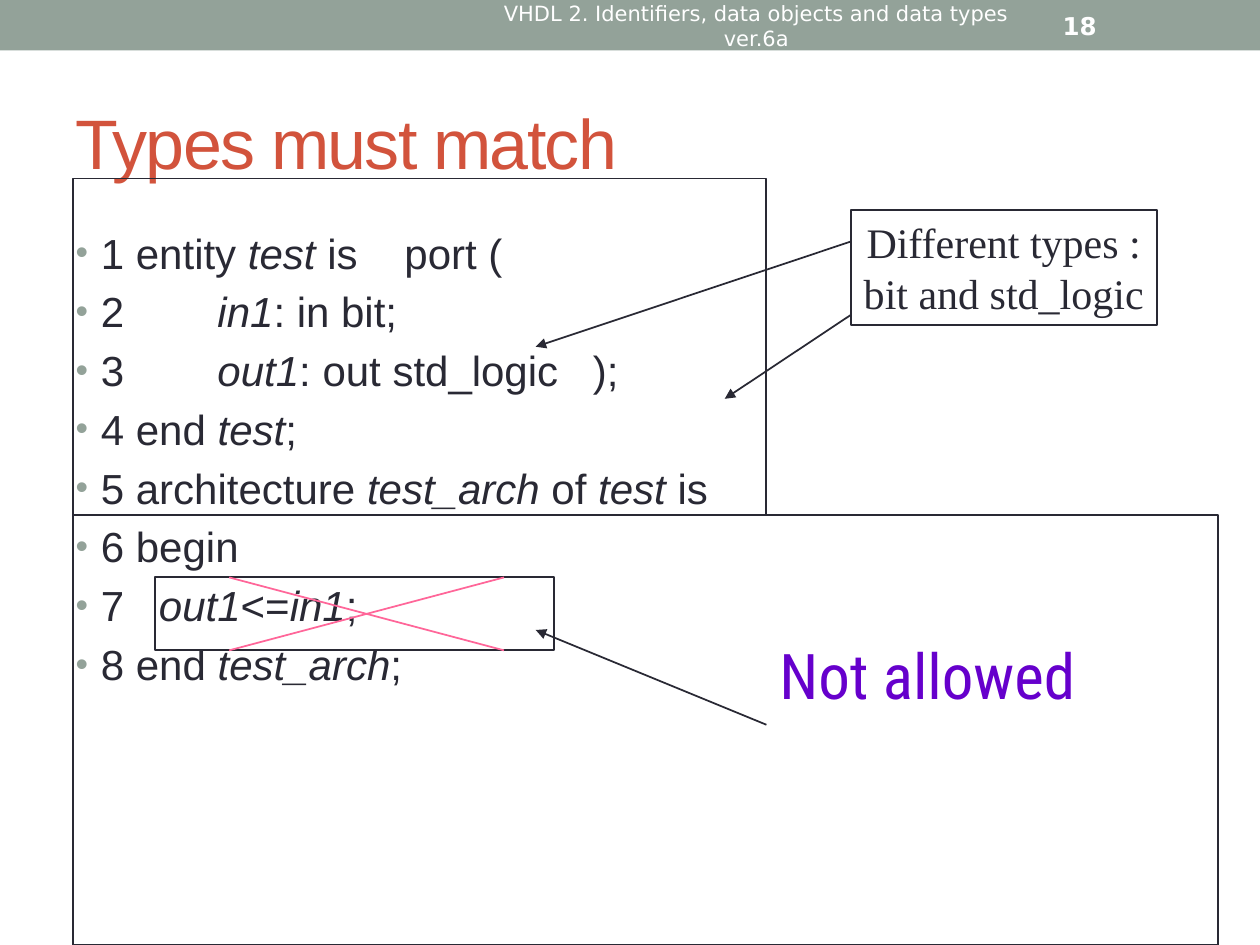
from dataclasses import dataclass

import pptx
import pptx.dml.color
import pptx.enum.shapes
import pptx.enum.text
import pptx.oxml.ns
import pptx.util
from lxml import etree
from pptx.enum.text import MSO_ANCHOR, MSO_AUTO_SIZE, PP_ALIGN
from pptx.util import Cm, Pt


@dataclass(frozen=True)
class Theme:
    ink: str = "292934"
    sage: str = "93A299"
    rust: str = "D2533C"
    white: str = "FFFFFF"
    pink: str = "FF6699"
    violet: str = "6600CC"
    sans: str = "Arial"
    header: str = "DejaVu Sans"
    serif: str = "Times New Roman"
    condensed: str = "Roboto Condensed"
    title_size: int = 40
    warning_size: int = 36
    text_size: int = 24
    number_size: int = 14
    header_size: int = 12
    line_width: int = 1


THEME = Theme()

# Each line of code: its tab stops in cm, then its text with *italic* names.
CODE = [
    ([6.63], "1 entity *test* is\tport ("),
    ([2.86], "2\t*in1*: in bit;"),
    ([2.86, 10.43], "3\t*out1*: out std_logic\t);"),
    ([], "4 end *test*;"),
    ([], "5 architecture *test_arch* of *test* is"),
    ([], "6 begin"),
    ([1.68], "7\t*out1*<=*in1*;"),
    ([], "8 end *test_arch*;"),
]


def rgb(color):
    return pptx.dml.color.RGBColor.from_string(color)


def add_xml(parent, tag, **attributes):
    return etree.SubElement(parent, pptx.oxml.ns.qn(tag), attributes)


def place(shape, left, top, width, height):
    shape.left, shape.top = Cm(left), Cm(top)
    shape.width, shape.height = Cm(width), Cm(height)


def set_font(paragraph, name, size, color, bold=False):
    font = paragraph.font
    font.name, font.size, font.bold = name, Pt(size), bold
    font.color.rgb = rgb(color)


def set_title(slide, wording):
    title = slide.shapes.title
    place(title, 1.27, 1.49, 22.86, 2.74)
    frame = title.text_frame
    frame.text = wording
    frame.auto_size = MSO_AUTO_SIZE.NONE
    frame.vertical_anchor = MSO_ANCHOR.MIDDLE
    paragraph = frame.paragraphs[0]
    paragraph.alignment = PP_ALIGN.LEFT
    set_font(paragraph, THEME.sans, THEME.title_size, THEME.rust)
    paragraph.runs[0]._r.get_or_add_rPr().set("spc", "-100")


def format_bullet(paragraph, tab_stops):
    """Hanging bullet, with tab stops measured in cm from the text edge."""
    properties = paragraph._p.get_or_add_pPr()
    properties.set("marL", str(Cm(0.51)))
    properties.set("indent", str(Cm(-0.51)))
    bullet_color = add_xml(properties, "a:buClr")
    add_xml(bullet_color, "a:srgbClr", val=THEME.sage)
    add_xml(properties, "a:buSzPct", val="85000")
    add_xml(properties, "a:buFont", typeface=THEME.sans)
    add_xml(properties, "a:buChar", char="•")
    if tab_stops:
        tabs = add_xml(properties, "a:tabLst")
        for stop in tab_stops:
            add_xml(tabs, "a:tab", pos=str(Cm(stop)), algn="l")


def set_code(slide, lines):
    body = slide.placeholders[1]
    place(body, 1.27, 4.45, 22.86, 13.54)
    frame = body.text_frame
    frame.auto_size = MSO_AUTO_SIZE.NONE
    for index, (tab_stops, wording) in enumerate(lines):
        paragraph = frame.add_paragraph() if index else frame.paragraphs[0]
        paragraph.space_before = Pt(4.8)
        format_bullet(paragraph, tab_stops)
        set_font(paragraph, THEME.sans, THEME.text_size, THEME.ink)
        for part, segment in enumerate(wording.split("*")):
            if segment:
                run = paragraph.add_run()
                run.text = segment
                if part % 2:
                    run.font.italic = True


def write(shape, lines, name, size, color, align=PP_ALIGN.CENTER,
          anchor=MSO_ANCHOR.MIDDLE, wrap=True, bold=False):
    frame = shape.text_frame
    frame.word_wrap = wrap
    if not wrap:
        frame.margin_left = frame.margin_right = 0
    frame.vertical_anchor = anchor
    frame.text = "\n".join(lines)
    for paragraph in frame.paragraphs:
        paragraph.alignment = align
        set_font(paragraph, name, size, color, bold)


def add_label(slide, box, wording, *style, **options):
    label = slide.shapes.add_textbox(*map(Cm, box))
    write(label, [wording], *style, **options)


def add_box(slide, box, fill=None):
    """Filled without an outline, or outlined without a fill."""
    rectangle = slide.shapes.add_shape(
        pptx.enum.shapes.MSO_SHAPE.RECTANGLE, *map(Cm, box))
    rectangle.shadow.inherit = False
    if fill:
        rectangle.fill.solid()
        rectangle.fill.fore_color.rgb = rgb(fill)
        rectangle.line.fill.background()
    else:
        rectangle.fill.background()
        rectangle.line.color.rgb = rgb(THEME.ink)
        rectangle.line.width = Pt(THEME.line_width)
    return rectangle


def add_line(slide, start, end, color=THEME.ink, arrow=False):
    line = slide.shapes.add_connector(
        pptx.enum.shapes.MSO_CONNECTOR.STRAIGHT, *map(Cm, start + end))
    line.line.color.rgb = rgb(color)
    line.line.width = Pt(THEME.line_width)
    if arrow:
        add_xml(line.line._get_or_add_ln(), "a:tailEnd", type="triangle")
    add_xml(line._element.spPr, "a:effectLst")


def add_header(slide):
    add_box(slide, (0, 0, 25.4, 1.02), THEME.sage)
    add_label(slide, (9.53, 0.07, 11.43, 0.91),
              "VHDL 2. Identifiers, data objects and data types ver.6a",
              THEME.header, THEME.header_size, THEME.white)
    add_label(slide, (21.17, 0.07, 2.96, 0.91), "18", THEME.header,
              THEME.number_size, THEME.white, align=PP_ALIGN.LEFT, bold=True)


def add_type_note(slide):
    note = add_box(slide, (17.15, 4.23, 6.17, 2.32))
    write(note, ["Different types :", "bit and std_logic"],
          THEME.serif, THEME.text_size, THEME.ink, wrap=False)
    add_line(slide, (17.15, 4.87), (10.8, 6.99), arrow=True)
    add_line(slide, (17.15, 6.35), (14.61, 8.04), arrow=True)


def add_forbidden_assignment(slide):
    left, right, top, bottom = 4.62, 10.16, 11.64, 13.11
    add_box(slide, (3.12, top, 8.05, bottom - top))
    add_label(slide, (15.57, 12.7, 6.25, 3.58), "Not allowed",
              THEME.condensed, THEME.warning_size, THEME.violet,
              anchor=MSO_ANCHOR.TOP, wrap=False)
    add_line(slide, (left, bottom), (right, top), THEME.pink)
    add_line(slide, (left, top), (right, bottom), THEME.pink)
    add_line(slide, (15.45, 14.61), (10.8, 12.7), arrow=True)


def main():
    deck = pptx.Presentation()
    deck.slide_width, deck.slide_height = Cm(25.4), Cm(19.05)
    slide = deck.slides.add_slide(deck.slide_layouts[1])
    set_title(slide, "Types must match")
    set_code(slide, CODE)
    add_header(slide)
    add_type_note(slide)
    add_forbidden_assignment(slide)
    add_box(slide, (1.48, 3.6, 13.97, 6.78))
    add_box(slide, (1.48, 10.38, 23.07, 8.67))
    deck.save("out.pptx")


if __name__ == "__main__":
    main()
